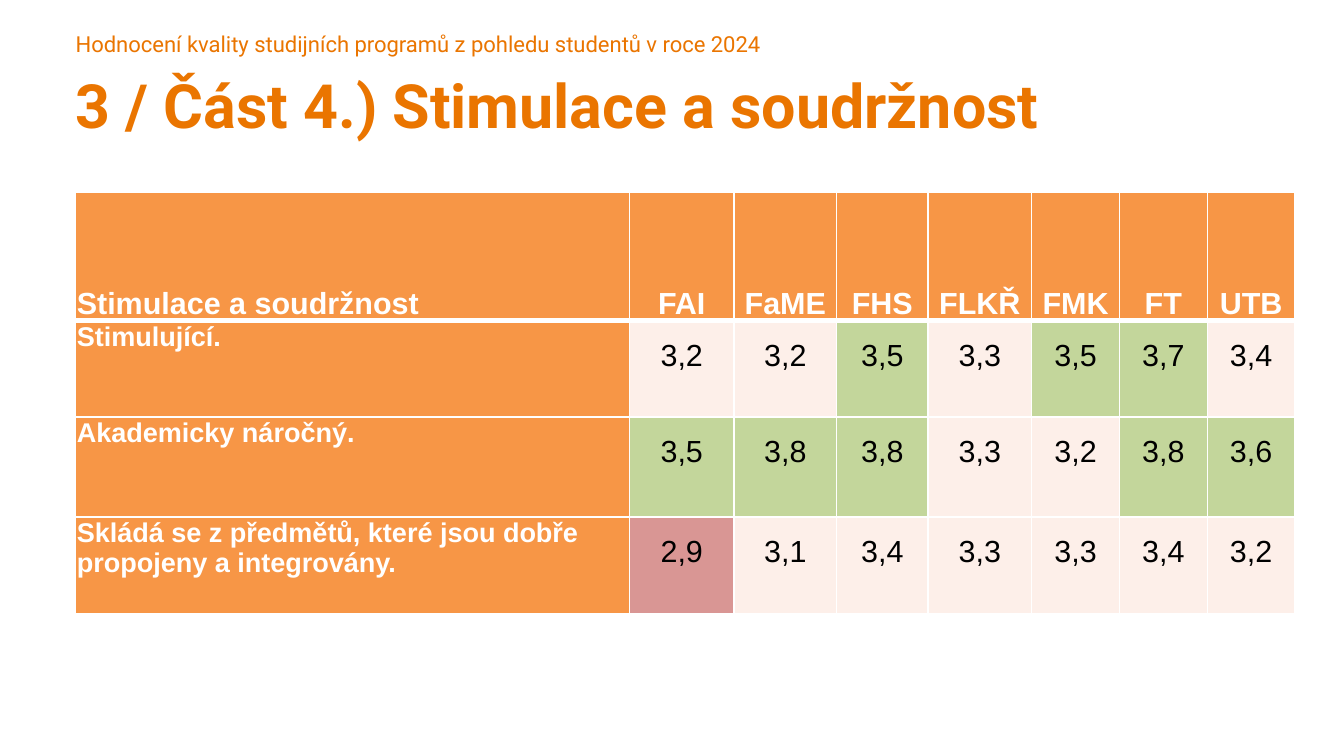
from lxml import etree
from pptx import Presentation
from pptx.dml.color import RGBColor
from pptx.enum.text import MSO_ANCHOR, PP_ALIGN
from pptx.oxml.ns import qn
from pptx.util import Inches, Pt

TOP, BOTTOM = MSO_ANCHOR.TOP, MSO_ANCHOR.BOTTOM
LEFT, CENTER = PP_ALIGN.LEFT, PP_ALIGN.CENTER

BRAND = RGBColor(0xEA, 0x75, 0x00)
ORANGE = RGBColor(0xF7, 0x96, 0x46)
GREEN = RGBColor(0xC3, 0xD6, 0x9B)
RED = RGBColor(0xD9, 0x96, 0x94)
PALE = RGBColor(0xFD, 0xEF, 0xE9)
WHITE = RGBColor(0xFF, 0xFF, 0xFF)
BLACK = RGBColor(0x00, 0x00, 0x00)

KICKER = "Hodnocení kvality studijních programů z pohledu studentů v roce 2024"
TITLE = "3 / Část 4.) Stimulace a soudržnost"
HEADER = ["Stimulace a soudržnost", "FAI", "FaME", "FHS", "FLKŘ", "FMK", "FT", "UTB"]
RATINGS = [
    ("Stimulující.", [3.2, 3.2, 3.5, 3.3, 3.5, 3.7, 3.4]),
    ("Akademicky náročný.", [3.5, 3.8, 3.8, 3.3, 3.2, 3.8, 3.6]),
    ("Skládá se z předmětů, které jsou dobře propojeny a integrovány.",
     [2.9, 3.1, 3.4, 3.3, 3.3, 3.4, 3.2]),
]

MARGIN = 0.62
TABLE_TOP = 1.58
COLUMN_WIDTHS = [4.54, 0.86, 0.84, 0.75, 0.85, 0.72, 0.72, 0.72]
ROW_HEIGHTS = [1.05, 0.79, 0.82, 0.79]
GOOD, WEAK = 3.5, 3.0

KICKER_FONT = {"name": "Roboto", "size": Pt(13), "bold": False}
TITLE_FONT = {"name": "Roboto", "size": Pt(36), "bold": True}
HEADER_FONT = {"name": "Arial", "size": Pt(18), "bold": True}
LABEL_FONT = {"name": "Arial", "size": Pt(16), "bold": True}
VALUE_FONT = {"name": "Arial", "size": Pt(18), "bold": False}

LABEL_PARA = {"alignment": LEFT}
HEADER_LEFT = {"alignment": LEFT, "line_spacing": 1.5}
HEADER_CENTER = {"alignment": CENTER, "line_spacing": 1.5}
VALUE_PARA = {"alignment": CENTER, "line_spacing": 1.5, "space_after": Pt(6)}


def apply(target, formats):
    for name, value in formats.items():
        setattr(target, name, value)


def write(frame, text, font, color, para_format):
    para = frame.paragraphs[0]
    apply(para, para_format)
    span = para.add_run()
    span.text = text
    apply(span.font, font)
    span.font.color.rgb = color


def set_margins(target, left, top, right, bottom):
    sides = {"left": left, "top": top, "right": right, "bottom": bottom}
    apply(target, {f"margin_{side}": Inches(size) for side, size in sides.items()})


def fill_heading(box, place, text, font):
    box.left, box.top, box.width, box.height = map(Inches, place)
    frame = box.text_frame
    frame.word_wrap = True
    frame.vertical_anchor = TOP
    set_margins(frame, 0, 0, 0, 0)
    write(frame, text, font, BRAND, LABEL_PARA)


def add_borders(cell, top, bottom):
    """Draw white cell borders; must run before the cell gets its fill."""
    properties = cell._tc.get_or_add_tcPr()
    for side, points in (("L", 1), ("R", 1), ("T", top), ("B", bottom)):
        line = etree.SubElement(properties, qn(f"a:ln{side}"), w=str(Pt(points)))
        fill = etree.SubElement(line, qn("a:solidFill"))
        etree.SubElement(fill, qn("a:srgbClr"), val=str(WHITE))


def rating_color(rating):
    if rating >= GOOD:
        return GREEN
    return RED if rating < WEAK else PALE


def fill_cell(table, row, column):
    cell = table.cell(row, column)
    add_borders(cell, top=3 if row == 1 else 1, bottom=3 if row == 0 else 1)
    set_margins(cell, 0.01, 0.01, 0.01, 0)
    cell.vertical_anchor = BOTTOM if row == 0 else TOP
    background, color = ORANGE, WHITE
    if row == 0:
        text, font = HEADER[column], HEADER_FONT
        para_format = HEADER_CENTER if column else HEADER_LEFT
        if column:
            set_margins(cell, 0.05, 0, 0.05, 0)
    elif column == 0:
        text, font, para_format = RATINGS[row - 1][0], LABEL_FONT, LABEL_PARA
    else:
        rating = RATINGS[row - 1][1][column - 1]
        text, font, para_format = f"{rating:.1f}".replace(".", ","), VALUE_FONT, VALUE_PARA
        background, color = rating_color(rating), BLACK
    cell.fill.solid()
    cell.fill.fore_color.rgb = background
    write(cell.text_frame, text, font, color, para_format)


def add_ratings_table(page):
    size = len(ROW_HEIGHTS), len(COLUMN_WIDTHS)
    place = MARGIN, TABLE_TOP, sum(COLUMN_WIDTHS), sum(ROW_HEIGHTS)
    table = page.shapes.add_table(*size, *map(Inches, place)).table
    table.horz_banding = False
    for column, width in zip(table.columns, COLUMN_WIDTHS):
        column.width = Inches(width)
    for row, height in zip(table.rows, ROW_HEIGHTS):
        row.height = Inches(height)
    for row in range(size[0]):
        for column in range(size[1]):
            fill_cell(table, row, column)


def main():
    deck = Presentation()
    deck.slide_width, deck.slide_height = Inches(11.02), Inches(6.2)
    page = deck.slides.add_slide(deck.slide_layouts[5])
    kicker = page.shapes.add_textbox(0, 0, 0, 0)
    fill_heading(kicker, (MARGIN, 0.25, 9.92, 0.22), KICKER, KICKER_FONT)
    fill_heading(page.shapes.title, (MARGIN, 0.55, 10.18, 0.61), TITLE, TITLE_FONT)
    add_ratings_table(page)
    deck.save("out.pptx")


if __name__ == "__main__":
    main()
